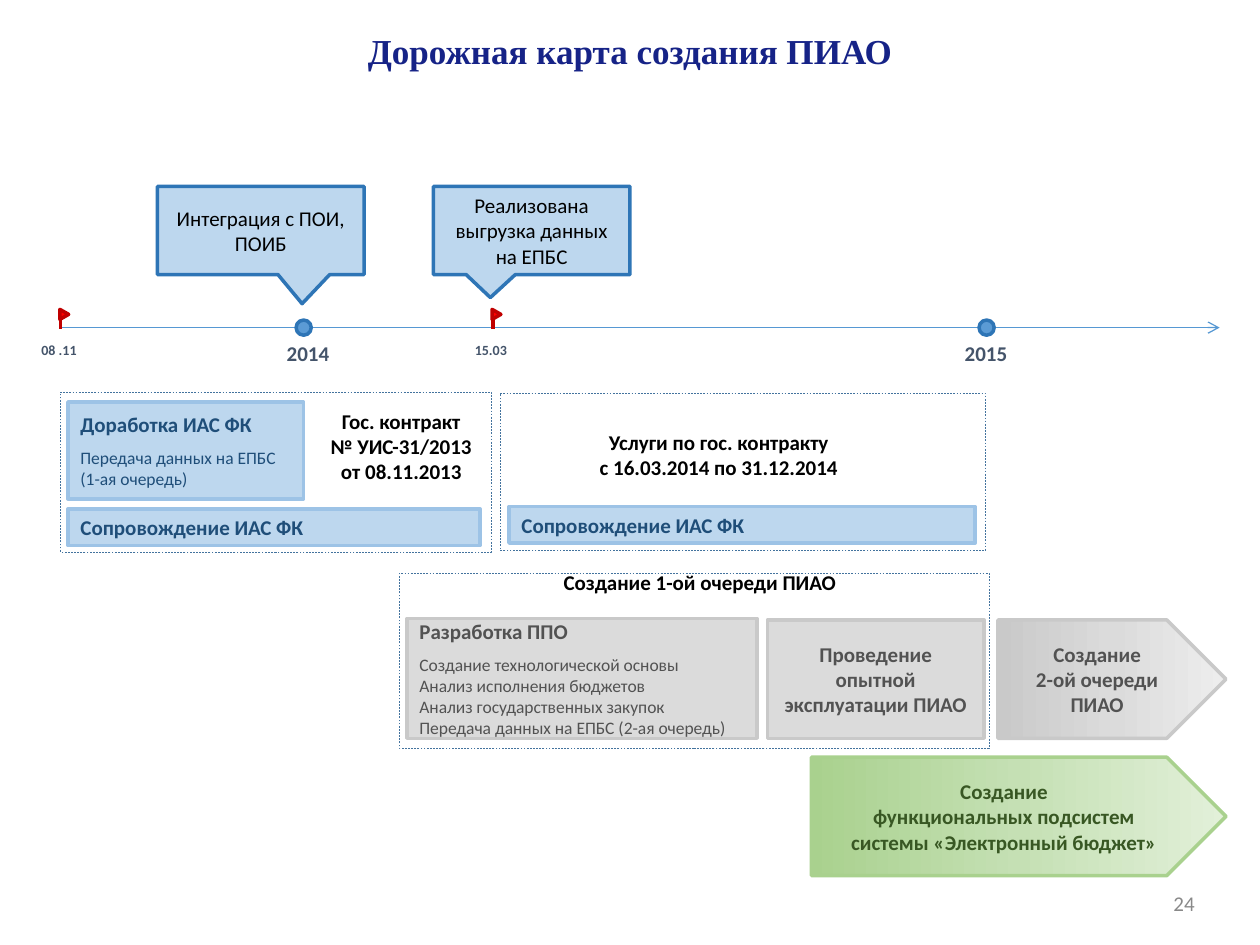
from dataclasses import dataclass

from lxml import etree
from pptx import Presentation
from pptx import util as u
from pptx.dml.color import RGBColor
from pptx.enum import dml, shapes, text
from pptx.oxml.ns import qn

PX = 9144  # one px is a hundredth of an inch
SHAPE = shapes.MSO_SHAPE
LEFT, CENTER, RIGHT = text.PP_ALIGN.LEFT, text.PP_ALIGN.CENTER, text.PP_ALIGN.RIGHT
TOP, MIDDLE = text.MSO_ANCHOR.TOP, text.MSO_ANCHOR.MIDDLE


@dataclass(frozen=True)
class Theme:
    heading_font: str = "Times New Roman"
    body_font: str = "Calibri"
    heading_size: int = 20
    label_size: int = 12
    detail_size: int = 10
    date_size: int = 8
    heading: str = "162387"
    black: str = "000000"
    white: str = "FFFFFF"
    number: str = "898989"
    year: str = "44546A"
    frame: str = "43739E"
    axis: str = "5698D3"
    dot: str = "5B9BD5"
    accent: str = "2E75B6"
    blue: str = "BDD7EE"
    blue_edge: str = "9DC3E6"
    blue_text: str = "1F4E79"
    gray: str = "DBDBDB"
    gray_edge: str = "C9C9C9"
    gray_text: str = "525252"
    green_edge: str = "A9D18E"
    green_text: str = "385723"
    flag: str = "FF0000"
    flag_edge: str = "C00000"
    gray_fade: tuple = ("C9C9C9", "DBDBDB", "EDEDED")
    green_fade: tuple = ("A9D18E", "C5E0B4", "E2F0D9")


THEME = Theme()


def px(*lengths):
    return [u.Emu(length * PX) for length in lengths]


def rgb(value):
    return RGBColor.from_string(value)


def write(shape, lines, color, size=THEME.label_size, bold=True, align=CENTER,
          anchor=MIDDLE, font=THEME.body_font, details=(), spacing=None, wrap=True):
    """Fill a shape with label lines, then smaller detail lines; \\n breaks a line."""
    frame = shape.text_frame
    frame.word_wrap = wrap
    frame.vertical_anchor = anchor
    styled = [(line, size, bold) for line in lines]
    styled += [(line, THEME.detail_size, False) for line in details]
    for index, (line, points, heavy) in enumerate(styled):
        paragraph = frame.add_paragraph() if index else frame.paragraphs[0]
        paragraph.alignment = align
        if spacing:
            paragraph.line_spacing = u.Pt(spacing)
        if details and index == 0:
            paragraph.space_after = u.Pt(6)
        for position, part in enumerate(line.split("\n")):
            if position:
                paragraph.add_line_break()
            run = paragraph.add_run()
            run.text = part
            run.font.name, run.font.size = font, u.Pt(points)
            run.font.bold = heavy
            run.font.color.rgb = rgb(color)


def add_label(parent, box, lines, color=THEME.black, **style):
    write(parent.add_textbox(*px(*box)), lines, color, **style)


def add_block(parent, kind, box, fill, edge, width=2):
    shape = parent.add_shape(kind, *px(*box))
    shape.shadow.inherit = False
    if fill:
        shape.fill.solid()
        shape.fill.fore_color.rgb = rgb(fill)
    else:
        shape.fill.background()
    shape.line.color.rgb = rgb(edge)
    shape.line.width = u.Pt(width)
    return shape


def add_frame(parent, box, fill=None):
    shape = add_block(parent, SHAPE.RECTANGLE, box, fill, THEME.frame, 0.25)
    shape.line.dash_style = dml.MSO_LINE.DASH


def add_blue_task(parent, box, title, details=()):
    shape = add_block(parent, SHAPE.RECTANGLE, box, THEME.blue, THEME.blue_edge)
    write(shape, [title], THEME.blue_text, align=LEFT, details=details)


def add_gray_task(parent, box, title, align, details=()):
    shape = add_block(parent, SHAPE.RECTANGLE, box, THEME.gray, THEME.gray_edge)
    write(shape, [title], THEME.gray_text, align=align, details=details)


def add_arrow_block(parent, box, fade, edge, title, color):
    shape = add_block(parent, SHAPE.PENTAGON, box, None, edge)
    shape.fill.gradient()
    shape.fill.gradient_angle = 0
    # The default gradient has two stops; add the third
    stop_list = shape._element.spPr.find(qn("a:gradFill")).find(qn("a:gsLst"))
    third = etree.SubElement(stop_list, qn("a:gs"), pos="100000")
    etree.SubElement(third, qn("a:srgbClr"), val=fade[2])
    for index, stop in enumerate(shape.fill.gradient_stops):
        stop.position = index / 2
        stop.color.rgb = rgb(fade[index])
    write(shape, [title], color)


def add_callout(parent, box, tip, caption):
    shape = add_block(parent, SHAPE.RECTANGULAR_CALLOUT, box, THEME.blue, THEME.accent)
    shape.adjustments[0], shape.adjustments[1] = tip
    write(shape, [caption], THEME.black, bold=False)


def add_line(parent, start, end, color, width, arrow=False):
    line = parent.add_connector(shapes.MSO_CONNECTOR.STRAIGHT, *px(*start, *end))
    line.line.color.rgb = rgb(color)
    line.line.width = u.Pt(width)
    properties = line._element.spPr
    if arrow:
        etree.SubElement(properties.find(qn("a:ln")), qn("a:tailEnd"), type="arrow")
    etree.SubElement(properties, qn("a:effectLst"))


def add_flag(parent, x, date, date_box):
    add_line(parent, (x, 249), (x, 261), THEME.flag_edge, 2.25)
    pennant = add_block(parent, SHAPE.ISOSCELES_TRIANGLE, (x - 1, 246, 8, 7),
                        THEME.flag, THEME.flag_edge)
    pennant.rotation = 90
    add_label(parent, date_box, [date], THEME.year, size=THEME.date_size,
              align=LEFT, anchor=TOP, wrap=False)


def add_year(parent, x, year, year_box):
    add_block(parent, SHAPE.OVAL, (x, 254, 12, 12), THEME.dot, THEME.accent)
    add_label(parent, year_box, [year], THEME.year)


def add_contracts(slide):
    # Contract of 2013
    group = slide.shapes.add_group_shape().shapes
    add_frame(group, (48, 311, 342, 127))
    add_blue_task(group, (54, 404, 327, 29), "Сопровождение ИАС ФК")
    add_blue_task(group, (54, 319, 187, 77), "Доработка ИАС ФК",
                  ["Передача данных на ЕПБС\n(1-ая очередь)"])
    add_label(group, (250, 319, 137, 71),
              ["Гос. контракт", "№ УИС-31/2013", "от 08.11.2013"], anchor=TOP)
    # Services of 2014
    group = slide.shapes.add_group_shape().shapes
    add_frame(group, (397, 312, 385, 125))
    add_blue_task(group, (404, 402, 370, 29), "Сопровождение ИАС ФК")
    add_label(group, (437, 336, 267, 50),
              ["Услуги по гос. контракту", "с 16.03.2014 по 31.12.2014"], anchor=TOP)


def add_stages(slide):
    # First stage
    group = slide.shapes.add_group_shape().shapes
    add_frame(group, (317, 455, 468, 139), THEME.white)
    add_gray_task(group, (323, 491, 278, 95), "Разработка ППО", LEFT,
                  ["Создание технологической основы", "Анализ исполнения бюджетов",
                   "Анализ государственных закупок",
                   "Передача данных на ЕПБС (2-ая очередь)"])
    add_label(group, (422, 447, 267, 30), ["Создание 1-ой очереди ПИАО"], anchor=TOP)
    add_gray_task(group, (609, 492, 172, 94),
                  "Проведение опытной эксплуатации ПИАО", CENTER)
    # Later stages
    add_arrow_block(slide.shapes, (792, 492, 181, 94), THEME.gray_fade, THEME.gray_edge,
                    "Создание\n2-ой очереди ПИАО", THEME.gray_text)
    add_arrow_block(slide.shapes, (644, 601, 329, 94), THEME.green_fade, THEME.green_edge,
                    "Создание\nфункциональных подсистем\nсистемы «Электронный бюджет»",
                    THEME.green_text)


def add_timeline(slide):
    group = slide.shapes.add_group_shape().shapes
    add_line(group, (47, 260), (968, 260), THEME.axis, 0.75, arrow=True)
    add_year(group, 235, "2014", (211, 265, 67, 31))
    add_year(group, 777, "2015", (752, 265, 61, 31))
    add_flag(group, 391, "15.03", (367, 266, 46, 24))
    add_flag(group, 48, "08 .11", (23, 266, 48, 24))
    add_callout(slide.shapes, (344, 148, 156, 70), (-0.21, 0.76),
                "Реализована выгрузка данных на ЕПБС")
    add_callout(slide.shapes, (125, 148, 164, 70), (0.2, 0.83),
                "Интеграция с ПОИ, ПОИБ")


def main():
    presentation = Presentation()
    presentation.slide_width, presentation.slide_height = px(1000, 750)
    slide = presentation.slides.add_slide(presentation.slide_layouts[6])
    # Title and slide number
    add_label(slide.shapes, (0, 16, 1000, 78), ["Дорожная карта создания ПИАО"],
              THEME.heading, size=THEME.heading_size, font=THEME.heading_font,
              anchor=TOP, spacing=26)
    add_label(slide.shapes, (917, 697, 41, 40), ["24"], THEME.number,
              bold=False, align=RIGHT)
    add_contracts(slide)
    add_stages(slide)
    add_timeline(slide)
    presentation.save("out.pptx")


if __name__ == "__main__":
    main()
